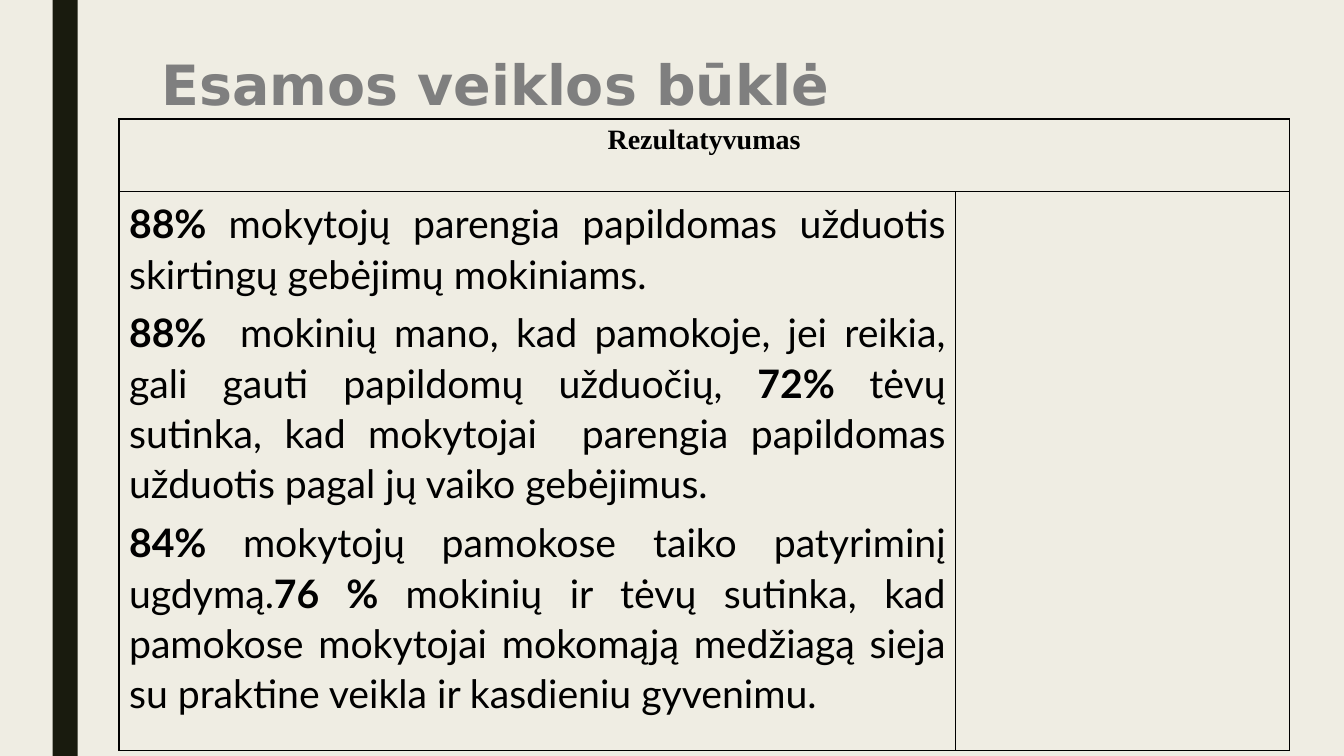
import pptx
import pptx.dml.color
import pptx.enum.shapes
import pptx.enum.text
import pptx.oxml
import pptx.oxml.ns
import pptx.util
from dataclasses import dataclass

Pt = pptx.util.Pt
Align = pptx.enum.text.PP_ALIGN
Anchor = pptx.enum.text.MSO_ANCHOR


def tint(code: str) -> pptx.dml.color.RGBColor:
    return pptx.dml.color.RGBColor.from_string(code)


@dataclass(frozen=True)
class Style:
    font: str
    size: float
    color: str
    align: Align
    line: float = 1.0
    before: float = 0


@dataclass(frozen=True)
class Span:
    text: str
    bold: bool = False


@dataclass(frozen=True)
class Theme:
    back: str = "EFEDE3"
    bar: str = "191B0E"
    rule: str = "000000"
    title: Style = Style("DejaVu Sans", 39.6, "7F7F7F", Align.LEFT, 0.89)
    head: Style = Style("Times New Roman", 20, "000000", Align.CENTER)
    body: Style = Style("Lato", 28, "000000", Align.JUSTIFY, 1.07, 6)


THEME = Theme()

TITLE = [[Span("Esamos veiklos būklė", True)]]
HEAD = [[Span("Rezultatyvumas", True)]]
BODY = [
    [Span("88% ", True),
     Span("mokytojų parengia papildomas užduotis skirtingų gebėjimų mokiniams.")],
    [Span("88%  ", True),
     Span("mokinių mano, kad pamokoje, jei reikia, gali gauti papildomų užduočių, "),
     Span("72% ", True),
     Span("tėvų sutinka, kad mokytojai  parengia papildomas užduotis "
          "pagal jų vaiko gebėjimus.")],
    [Span("84% ", True),
     Span("mokytojų pamokose taiko patyriminį ugdymą."),
     Span("76 % ", True),
     Span("mokinių ir tėvų sutinka, kad pamokose mokytojai mokomąją medžiagą "
          "sieja su praktine veikla ir kasdieniu gyvenimu.")],
]


def write(frame, paras: list[list[Span]], style: Style) -> None:
    for i, spans in enumerate(paras):
        para = frame.paragraphs[0] if i == 0 else frame.add_paragraph()
        para.alignment = style.align
        para.line_spacing = style.line
        para.space_before = Pt(style.before)
        for span in spans:
            run = para.add_run()
            run.text = span.text
            run.font.name = style.font
            run.font.size = Pt(style.size)
            run.font.bold = span.bold
            run.font.color.rgb = tint(style.color)


def frame_cell(cell) -> None:
    """Clear the fill and rule all four sides."""
    props = cell._tc.get_or_add_tcPr()
    for side in ("lnL", "lnR", "lnT", "lnB"):
        props.append(pptx.oxml.parse_xml(
            f'<a:{side} {pptx.oxml.ns.nsdecls("a")} w="{Pt(1)}"><a:solidFill>'
            f'<a:srgbClr val="{THEME.rule}"/></a:solidFill></a:{side}>'))
    cell.fill.background()


def add_bar(slide) -> None:
    bar = slide.shapes.add_shape(
        pptx.enum.shapes.MSO_SHAPE.RECTANGLE, Pt(37.5), 0, Pt(18), Pt(540))
    bar.shadow.inherit = False
    bar.fill.solid()
    bar.fill.fore_color.rgb = tint(THEME.bar)
    bar.line.fill.background()


def add_title(slide) -> None:
    title = slide.shapes.title
    title.left, title.top, title.width, title.height = map(Pt, (108, 34, 756, 57))
    frame = title.text_frame
    frame.word_wrap = True
    frame.auto_size = pptx.enum.text.MSO_AUTO_SIZE.NONE
    frame.vertical_anchor = Anchor.MIDDLE
    write(frame, TITLE, THEME.title)


def add_grid(slide) -> None:
    cols, rows = (597.6, 238.4), (52, 399)
    grid = slide.shapes.add_table(
        len(rows), len(cols), Pt(85), Pt(85), Pt(sum(cols)), Pt(sum(rows))).table
    grid.first_row = grid.horz_banding = False
    for col, width in zip(grid.columns, cols):
        col.width = Pt(width)
    for row, height in zip(grid.rows, rows):
        row.height = Pt(height)
    for cell in grid.iter_cells():
        frame_cell(cell)
    grid.cell(0, 0).merge(grid.cell(0, 1))
    write(grid.cell(0, 0).text_frame, HEAD, THEME.head)
    write(grid.cell(1, 0).text_frame, BODY, THEME.body)


def main() -> None:
    deck = pptx.Presentation()
    deck.slide_width, deck.slide_height = Pt(960), Pt(540)
    slide = deck.slides.add_slide(deck.slide_layouts.get_by_name("Title Only"))
    slide.background.fill.solid()
    slide.background.fill.fore_color.rgb = tint(THEME.back)
    # Side bar, heading and results table
    add_bar(slide)
    add_title(slide)
    add_grid(slide)
    deck.save("out.pptx")


if __name__ == "__main__":
    main()
